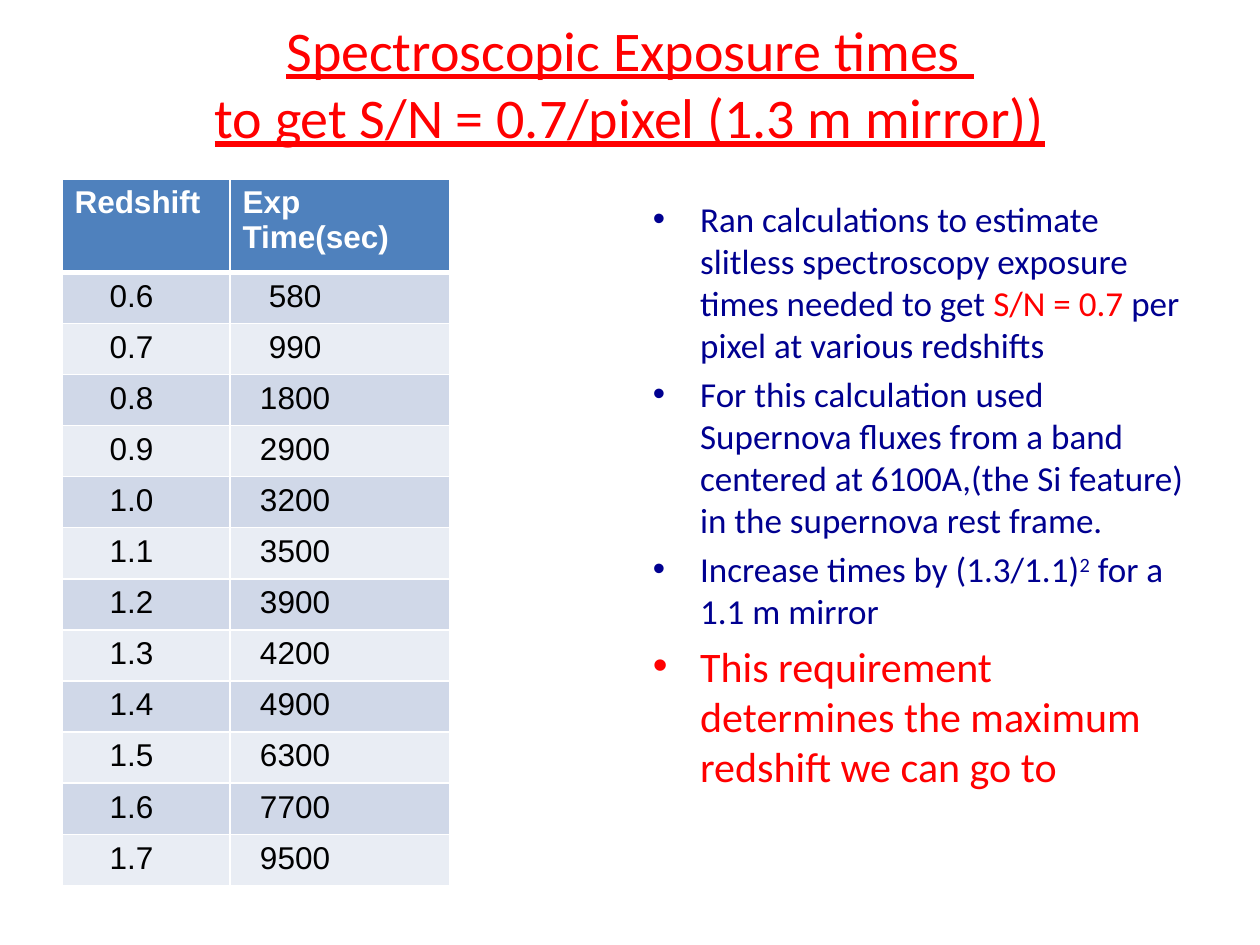
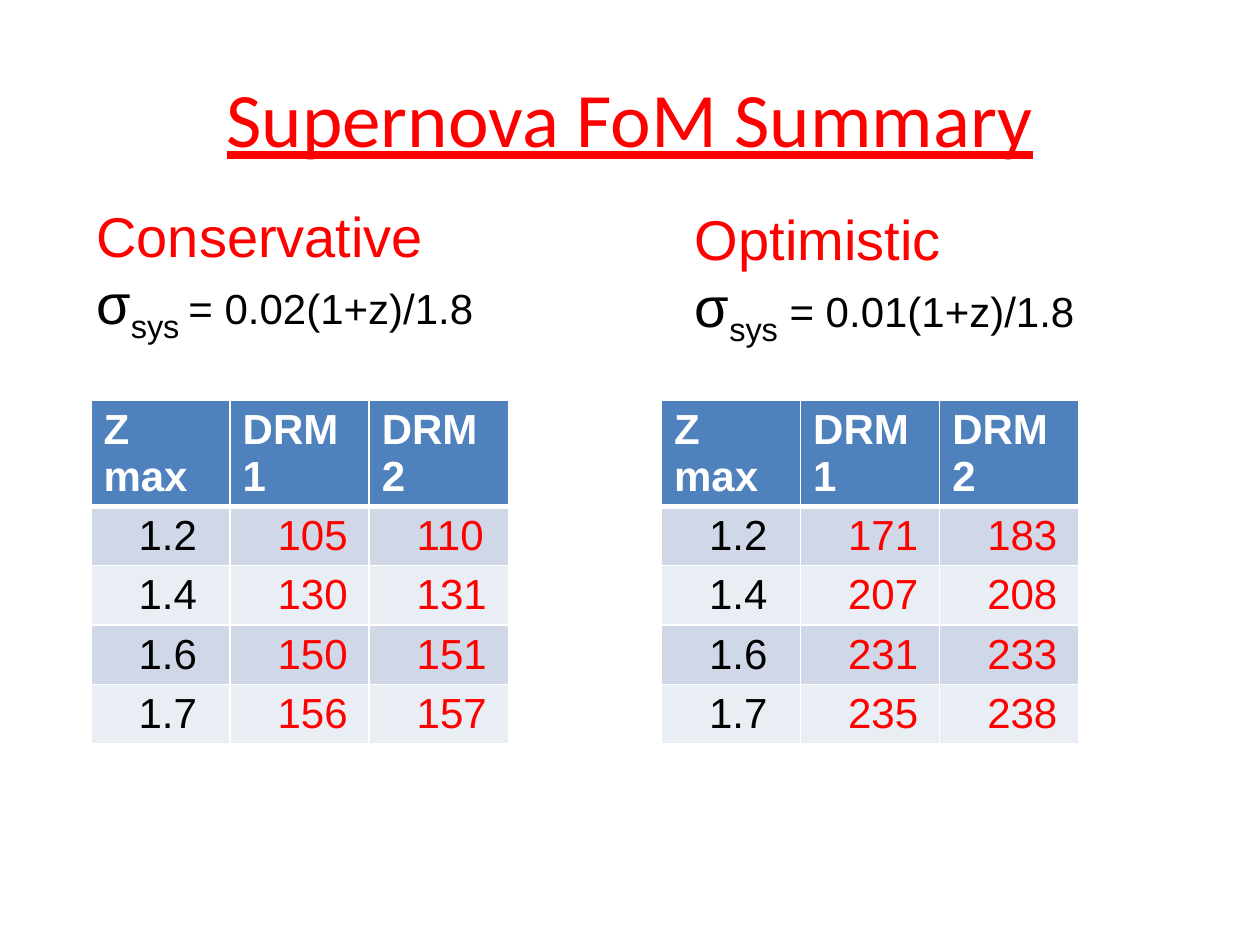
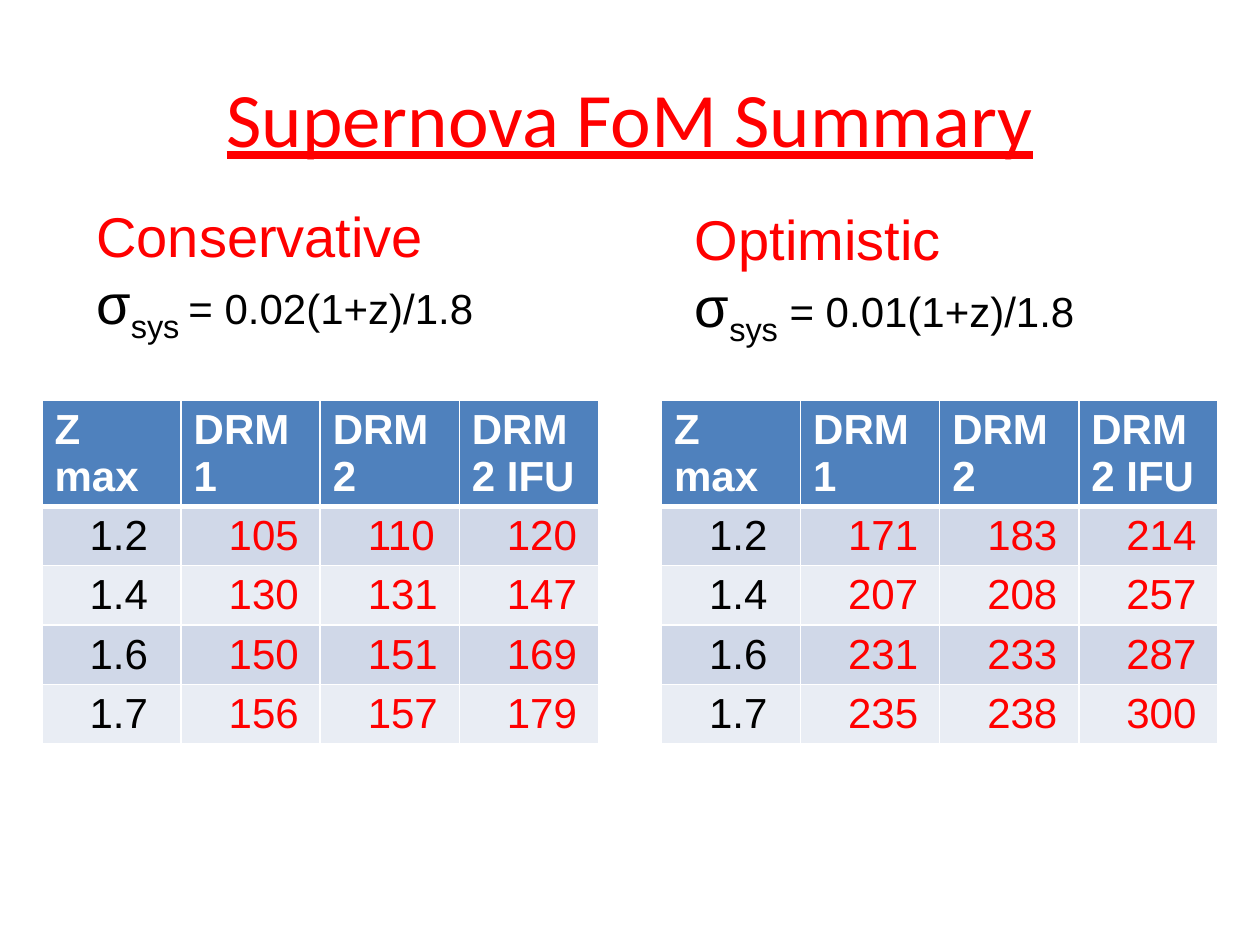
from collections import namedtuple
from dataclasses import dataclass

from lxml.etree import SubElement
from pptx import Presentation
from pptx.dml.color import RGBColor
from pptx.enum.text import MSO_ANCHOR, MSO_AUTO_SIZE, PP_ALIGN
from pptx.oxml.ns import qn
from pptx.util import Pt

Box = namedtuple("Box", "left top width height")


@dataclass(frozen=True)
class Theme:
    red: str = "FF0000"
    navy: str = "000090"
    black: str = "000000"
    white: str = "FFFFFF"
    header: str = "4F81BD"
    bands: tuple = ("D0D8E8", "E9EDF4")
    text_font: str = "Calibri"
    data_font: str = "Arial"
    title: int = 44
    long_title: int = 32
    heading: int = 32
    formula: int = 24
    point: int = 20
    key_point: int = 24
    exposure: int = 18
    merit: int = 24
    rule: float = 1
    header_rule: float = 3
    cell_margin: float = 7.2


THEME = Theme()

EXPOSURES = [
    ("0.6", "580"), ("0.7", "990"), ("0.8", "1800"), ("0.9", "2900"),
    ("1.0", "3200"), ("1.1", "3500"), ("1.2", "3900"), ("1.3", "4200"),
    ("1.4", "4900"), ("1.5", "6300"), ("1.6", "7700"), ("1.7", "9500"),
]

POINTS = [
    (THEME.point, [
        ("Ran calculations to estimate slitless spectroscopy exposure times needed to get ", THEME.navy, 0),
        ("S/N = 0.7 ", THEME.red, 0),
        ("per pixel at various redshifts", THEME.navy, 0),
    ]),
    (THEME.point, [
        ("For this calculation used Supernova fluxes from a band centered at 6100A,"
         "(the Si feature) in the supernova rest frame.", THEME.navy, 0),
    ]),
    (THEME.point, [
        ("Increase times by (1.3/1.1)", THEME.navy, 0),
        ("2", THEME.navy, 30),
        (" for a 1.1 m mirror", THEME.navy, 0),
    ]),
    (THEME.key_point, [
        ("This requirement determines the maximum redshift we can go to", THEME.red, 0),
    ]),
]

MERIT_HEADER = ("Z max", "DRM 1", "DRM 2", "DRM 2 IFU")
CONSERVATIVE = [
    ("1.2", "105", "110", "120"),
    ("1.4", "130", "131", "147"),
    ("1.6", "150", "151", "169"),
    ("1.7", "156", "157", "179"),
]
OPTIMISTIC = [
    ("1.2", "171", "183", "214"),
    ("1.4", "207", "208", "257"),
    ("1.6", "231", "233", "287"),
    ("1.7", "235", "238", "300"),
]


def apply(target, formats):
    for name, value in formats.items():
        setattr(target, name, value)


def place(shape, box):
    apply(shape, {side: Pt(length) for side, length in box._asdict().items()})


def add_run(paragraph, text, font, size, color, baseline=0, **formats):
    run = paragraph.add_run()
    run.text = text
    apply(run.font, {"name": font, "size": Pt(size), **formats})
    run.font.color.rgb = RGBColor.from_string(color)
    if baseline:
        run.font._element.set("baseline", str(baseline * 1000))


def add_title(slide, box, lines, size):
    title = slide.shapes.title
    place(title, box)
    apply(title.text_frame, {"vertical_anchor": MSO_ANCHOR.MIDDLE, "word_wrap": True,
                             "auto_size": MSO_AUTO_SIZE.NONE})
    paragraph = title.text_frame.paragraphs[0]
    paragraph.alignment = PP_ALIGN.CENTER
    for number, line in enumerate(lines):
        if number:
            paragraph.add_line_break()
        add_run(paragraph, line, THEME.text_font, size, THEME.red, underline=True)


def add_points(slide, box, points):
    text_frame = slide.shapes.add_textbox(*map(Pt, box)).text_frame
    text_frame.word_wrap = True
    hanging = Pt(27)
    for number, (size, parts) in enumerate(points):
        paragraph = text_frame.add_paragraph() if number else text_frame.paragraphs[0]
        paragraph.space_before = Pt(size * 0.2)
        properties = paragraph._p.get_or_add_pPr()
        properties.set("marL", str(hanging))
        properties.set("indent", str(-hanging))
        SubElement(properties, qn("a:buFont"), typeface=THEME.data_font)
        SubElement(properties, qn("a:buChar"), char="•")
        for text, color, baseline in parts:
            add_run(paragraph, text, THEME.text_font, size, color, baseline)


def draw_borders(cell, row):
    widths = {
        "L": THEME.rule,
        "R": THEME.rule,
        "T": THEME.header_rule if row == 1 else THEME.rule,
        "B": THEME.header_rule if row == 0 else THEME.rule,
    }
    properties = cell._tc.get_or_add_tcPr()
    for side, width in widths.items():
        line = SubElement(properties, qn(f"a:ln{side}"), w=str(Pt(width)))
        SubElement(SubElement(line, qn("a:solidFill")), qn("a:srgbClr"), val=THEME.white)


def add_data_table(slide, box, rows, column_widths, row_heights, size, value_color, indent):
    frame = slide.shapes.add_table(len(rows), len(column_widths), *map(Pt, box))
    table = frame.table
    for column, width in zip(table.columns, column_widths):
        column.width = Pt(width)
    for row, height in zip(table.rows, row_heights):
        row.height = Pt(height)
    frame.height = Pt(box.height)
    for r, values in enumerate(rows):
        for c, value in enumerate(values):
            cell = table.cell(r, c)
            draw_borders(cell, r)
            cell.fill.solid()
            fill = THEME.bands[(r - 1) % 2] if r else THEME.header
            cell.fill.fore_color.rgb = RGBColor.from_string(fill)
            color = THEME.white if r == 0 else value_color if c else THEME.black
            if r:
                cell.margin_left = Pt(THEME.cell_margin + indent(c, value))
            add_run(cell.text_frame.paragraphs[0], value, THEME.data_font, size, color, bold=r == 0)


def exposure_indent(column, value):
    return 20 if column == 0 else 15 if len(value) == 3 else 10


def merit_indent(column, value):
    return 20


def add_merit_table(slide, left, values, columns):
    rows = [row[:columns] for row in [MERIT_HEADER, *values]]
    width = 79.5
    add_data_table(slide, Box(left, 228.5, width * columns, 208.8), rows, [width] * columns,
                   [29.2] * len(rows), THEME.merit, THEME.red, merit_indent)


def add_case(slide, box, name, subscript, formula):
    text_frame = slide.shapes.add_textbox(*map(Pt, box)).text_frame
    apply(text_frame, {"word_wrap": False, "auto_size": MSO_AUTO_SIZE.SHAPE_TO_FIT_TEXT})
    add_run(text_frame.paragraphs[0], name, THEME.data_font, THEME.heading, THEME.red)
    sigma = text_frame.add_paragraph()
    add_run(sigma, "σ", THEME.data_font, THEME.heading, THEME.black)
    add_run(sigma, subscript, THEME.data_font, THEME.heading, THEME.black, -25)
    add_run(sigma, formula, THEME.data_font, THEME.formula, THEME.black)


def build_exposure_slide(slide):
    add_title(slide, Box(36, 2, 648, 90),
              ["Spectroscopic Exposure times ", "to get S/N = 0.7/pixel (1.3 m mirror))"],
              THEME.long_title)
    rows = [("Redshift", "Exp Time(sec)"), *EXPOSURES]
    add_data_table(slide, Box(35.4, 102.2, 221.8, 403.9), rows, [96, 125.8],
                   [53.4] + [29.2] * len(EXPOSURES), THEME.exposure, THEME.black, exposure_indent)
    add_points(slide, Box(366, 109.4, 318, 396), POINTS)


def build_summary_slide(slide, conservative_left, columns):
    add_title(slide, Box(36, 21.6, 648, 90), ["Supernova FoM Summary"], THEME.title)
    add_merit_table(slide, conservative_left, CONSERVATIVE, columns)
    add_merit_table(slide, 378, OPTIMISTIC, columns)
    add_case(slide, Box(48, 111.6, 240.5, 85), "Conservative", "sys ", "= 0.02(1+z)/1.8")
    add_case(slide, Box(390, 113.2, 237.6, 123.8), "Optimistic", "sys", " = 0.01(1+z)/1.8")


def main():
    presentation = Presentation()
    apply(presentation, {"slide_width": Pt(720), "slide_height": Pt(540)})
    title_only = presentation.slide_layouts[5]
    build_exposure_slide(presentation.slides.add_slide(title_only))
    for conservative_left, columns in [(52, 3), (24, 4)]:
        build_summary_slide(presentation.slides.add_slide(title_only), conservative_left, columns)
    presentation.save("out.pptx")


if __name__ == "__main__":
    main()
